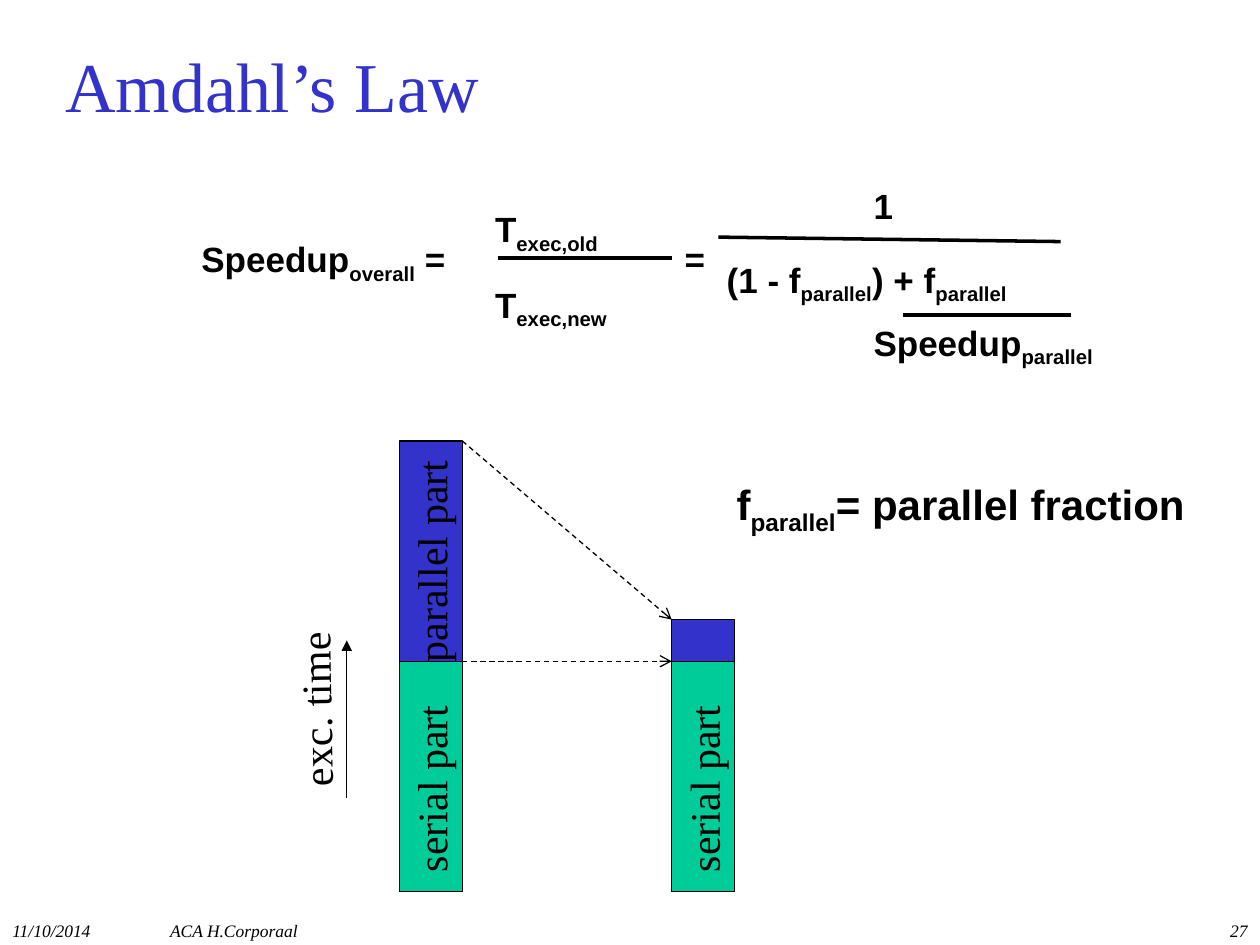
from lxml import etree
from pptx import Presentation
from pptx.dml.color import RGBColor
from pptx.enum.dml import MSO_LINE
from pptx.enum.shapes import MSO_CONNECTOR, MSO_SHAPE
from pptx.enum.text import MSO_ANCHOR, MSO_AUTO_SIZE, PP_ALIGN
from pptx.oxml.ns import qn
from pptx.util import Cm, Pt

STRAIGHT = MSO_CONNECTOR.STRAIGHT
RECTANGLE = MSO_SHAPE.RECTANGLE
DASH = MSO_LINE.DASH
MIDDLE = MSO_ANCHOR.MIDDLE
NO_AUTOFIT = MSO_AUTO_SIZE.NONE
GROW = MSO_AUTO_SIZE.SHAPE_TO_FIT_TEXT
LEFT, RIGHT = PP_ALIGN.LEFT, PP_ALIGN.RIGHT

BLACK = RGBColor(0x00, 0x00, 0x00)
BLUE = RGBColor(0x33, 0x33, 0xCC)
GREEN = RGBColor(0x00, 0xCC, 0x99)
SERIF, SANS = "Times New Roman", "Arial"

TITLE_ONLY = 5
BAR_WIDTH = 1.27
OLD_LEFT, NEW_LEFT = 8.05, 13.54
SERIAL_TOP, SERIAL_HEIGHT = 13.33, 4.65
OLD_PARALLEL_HEIGHT, NEW_PARALLEL_HEIGHT = 4.44, 0.84


def add_run(paragraph, text, font_name, size, color=BLACK, bold=False, italic=False):
    run = paragraph.add_run()
    run.text = text
    font = run.font
    font.name, font.size = font_name, Pt(size)
    font.bold, font.italic = bold, italic
    font.color.rgb = color
    return run


def add_term(paragraph, parts, size):
    """Write a formula term whose parts alternate between normal and subscript."""
    for index, part in enumerate(parts):
        run = add_run(paragraph, part, SANS, size, bold=True)
        if index % 2:
            run._r.get_or_add_rPr().set("baseline", "-25000")


def add_text_frame(shapes, left, top, width, height):
    box = shapes.add_textbox(Cm(left), Cm(top), Cm(width), Cm(height))
    box.text_frame.word_wrap = False
    box.text_frame.auto_size = GROW
    return box, box.text_frame


def add_formula(shapes, left, top, width, height, parts, size=20):
    frame = add_text_frame(shapes, left, top, width, height)[1]
    add_term(frame.paragraphs[0], parts, size)


def add_execution_times(shapes):
    frame = add_text_frame(shapes, 9.73, 4.11, 2.97, 2.41)[1]
    old, new = frame.paragraphs[0], frame.add_paragraph()
    for paragraph, subscript in ((old, "exec,old"), (new, "exec,new")):
        paragraph.line_spacing = 0.85
        add_term(paragraph, ("T", subscript), 20)
    new.space_before = Pt(20)


def add_vertical_label(shapes, text, center_x, bottom, length, rotation=270):
    """Add a label that reads upwards from bottom, around the line at center_x."""
    height = 1.27
    center_y = bottom - length / 2
    box, frame = add_text_frame(
        shapes, center_x - length / 2, center_y - height / 2, length, height)
    box.rotation = rotation
    add_run(frame.paragraphs[0], text, SERIF, 24)


def add_line(shapes, start, end, width=0.75, dash=None, head=None):
    line = shapes.add_connector(STRAIGHT, *(Cm(value) for value in (*start, *end)))
    line.line.color.rgb = BLACK
    line.line.width = Pt(width)
    if dash is not None:
        line.line.dash_style = dash
    if head:
        etree.SubElement(line.line._get_or_add_ln(), qn("a:tailEnd"), type=head)
    etree.SubElement(line._element.spPr, qn("a:effectLst"))


def add_bar_part(shapes, left, top, height, color):
    part = shapes.add_shape(RECTANGLE, Cm(left), Cm(top), Cm(BAR_WIDTH), Cm(height))
    part.shadow.inherit = False
    part.fill.solid()
    part.fill.fore_color.rgb = color
    part.line.color.rgb = BLACK
    part.line.width = Pt(0.75)


def add_bar(shapes, left, parallel_height):
    add_bar_part(shapes, left, SERIAL_TOP, SERIAL_HEIGHT, GREEN)
    add_bar_part(shapes, left, SERIAL_TOP - parallel_height, parallel_height, BLUE)


def add_footer(shapes, text, left, width, alignment=LEFT):
    box = shapes.add_textbox(Cm(left), Cm(18.42), Cm(width), Cm(0.63))
    box.text_frame.word_wrap = True
    paragraph = box.text_frame.paragraphs[0]
    paragraph.alignment = alignment
    add_run(paragraph, text, SERIF, 10, italic=True)


def set_title(title, text):
    title.left, title.top = Cm(1.06), Cm(0.85)
    title.width, title.height = Cm(23.5), Cm(1.69)
    frame = title.text_frame
    frame.auto_size = NO_AUTOFIT
    frame.vertical_anchor = MIDDLE
    paragraph = frame.paragraphs[0]
    paragraph.alignment = LEFT
    add_run(paragraph, text, SERIF, 40, BLUE)


def add_speedup_equation(shapes):
    add_formula(shapes, 3.81, 4.66, 5.77, 1.1, ("Speedup", "overall", " ="))
    add_execution_times(shapes)
    add_line(shapes, (10.03, 5.2), (13.55, 5.2), width=2)
    add_formula(shapes, 13.55, 4.66, 0.91, 1.1, ("=",))
    add_formula(shapes, 17.36, 3.6, 0.89, 1.1, ("1",))
    add_line(shapes, (14.48, 4.78), (21.38, 4.87), width=2)
    add_formula(shapes, 14.4, 5.08, 6.6, 1.1,
                ("(1 - f", "parallel", ") + f", "parallel"))
    add_formula(shapes, 17.36, 6.35, 5.18, 1.1, ("Speedup", "parallel"))
    add_line(shapes, (18.2, 6.35), (21.59, 6.35), width=2)


def add_time_bars(shapes):
    add_bar(shapes, OLD_LEFT, OLD_PARALLEL_HEIGHT)
    add_bar(shapes.add_group_shape().shapes, NEW_LEFT, NEW_PARALLEL_HEIGHT)
    for left in (OLD_LEFT, NEW_LEFT):
        add_vertical_label(shapes, "serial part", left + BAR_WIDTH / 2, 17.83, 4.1)
    add_vertical_label(shapes, "parallel part", OLD_LEFT + BAR_WIDTH / 2, 13.6, 4.8)
    for old_height, new_height in ((0, 0), (OLD_PARALLEL_HEIGHT, NEW_PARALLEL_HEIGHT)):
        add_line(shapes, (OLD_LEFT + BAR_WIDTH, SERIAL_TOP - old_height),
                 (NEW_LEFT, SERIAL_TOP - new_height), dash=DASH, head="arrow")
    add_line(shapes, (6.99, 16.09), (6.99, 12.91), head="triangle")
    add_vertical_label(shapes, "exc. time", 6.35, 16.1, 3.7, rotation=269)


def main():
    presentation = Presentation()
    presentation.slide_width, presentation.slide_height = Cm(25.4), Cm(19.05)
    slide = presentation.slides.add_slide(presentation.slide_layouts[TITLE_ONLY])
    shapes = slide.shapes

    add_footer(shapes, "11/10/2014", 0, 3.18)
    add_footer(shapes, "ACA H.Corporaal", 3.18, 8.05)
    add_footer(shapes, "27", 20.12, 5.28, RIGHT)
    set_title(shapes.title, "Amdahl’s Law")
    add_speedup_equation(shapes.add_group_shape().shapes)
    add_time_bars(shapes)
    add_formula(shapes, 14.6, 9.53, 9.91, 1.3,
                ("f", "parallel", "= parallel fraction"), size=24)
    presentation.save("out.pptx")


if __name__ == "__main__":
    main()
